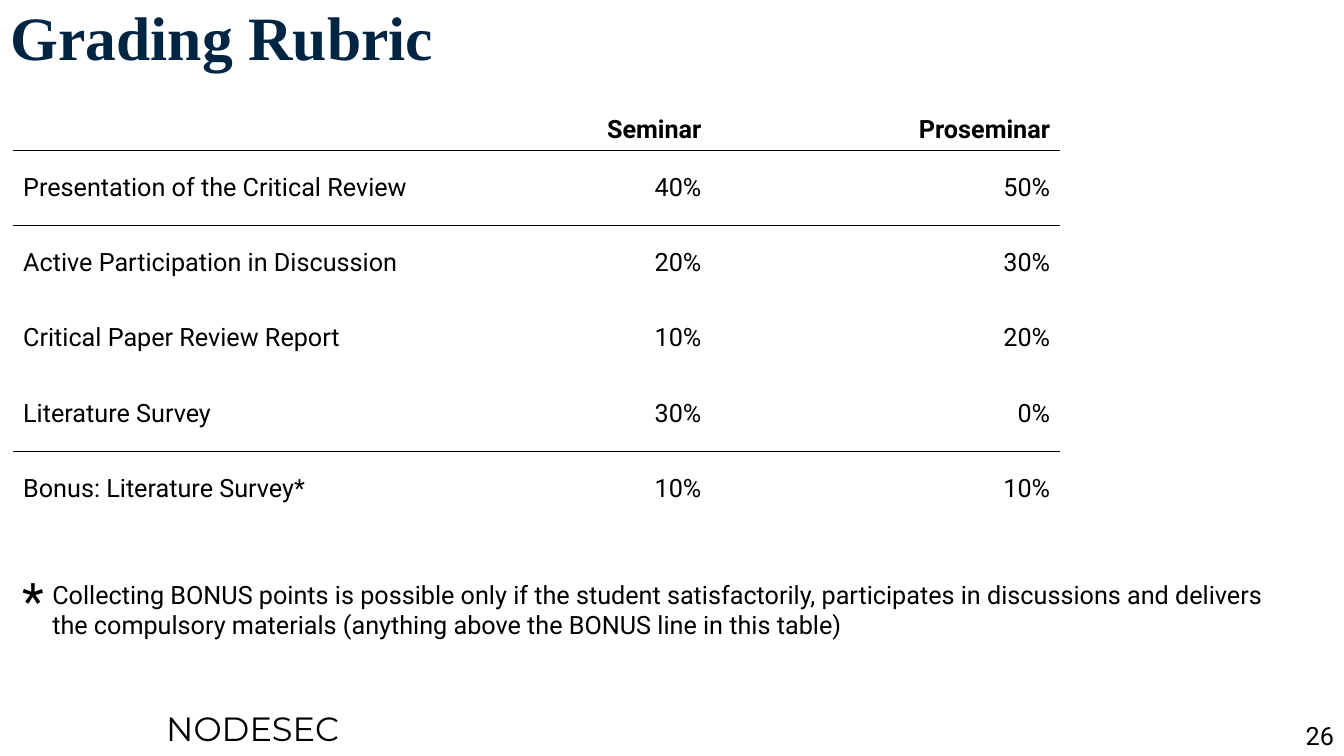
from collections import namedtuple

from lxml.etree import SubElement
from pptx import Presentation
from pptx.dml.color import RGBColor
from pptx.enum.text import MSO_ANCHOR as Anchor, PP_ALIGN as Align
from pptx.oxml.ns import qn
from pptx.util import Cm, Pt

BLACK = RGBColor(0x00, 0x00, 0x00)
NAVY = RGBColor(0x00, 0x25, 0x43)
BODY_FONT = "Roboto"

Box = namedtuple("Box", "left top width height")

RUBRIC = [
    ("", "Seminar", "Proseminar"),
    ("Presentation of the Critical Review", "40%", "50%"),
    ("Active Participation in Discussion", "20%", "30%"),
    ("Critical Paper Review Report", "10%", "20%"),
    ("Literature Survey", "30%", "0%"),
    ("Bonus: Literature Survey*", "10%", "10%"),
]
RULED_ROWS = {0, 1, 4}
COLUMN_SHARES = (0.415, 0.252, 0.333)
HEADER_HEIGHT = Cm(0.93)
FOOTNOTE = (
    "Collecting BONUS points is possible only if the student satisfactorily, "
    "participates in discussions and delivers\n"
    "the compulsory materials (anything above the BONUS line in this table)"
)


def style_paragraph(paragraph, size=18, name=BODY_FONT, color=BLACK, bold=False, align=Align.LEFT):
    paragraph.alignment = align
    font = paragraph.font
    font.size, font.name, font.bold = Pt(size), name, bold
    font.color.rgb = color


def add_text(slide, box, text, wrap=True, anchor=Anchor.TOP, **style):
    frame = slide.shapes.add_textbox(*box).text_frame
    frame.word_wrap = wrap
    frame.vertical_anchor = anchor
    paragraph = frame.paragraphs[0]
    paragraph.text = text
    style_paragraph(paragraph, **style)
    return paragraph


def add_title(slide, box):
    title = add_text(slide, box, "Grading Rubric", anchor=Anchor.MIDDLE,
                     size=44, name="Times New Roman", color=NAVY, bold=True)
    title.line_spacing = 0.9


def set_borders(cell, ruled_sides):
    properties = cell._tc.get_or_add_tcPr()
    for side in ("lnL", "lnR", "lnT", "lnB"):
        line = SubElement(properties, qn(f"a:{side}"), w=str(Pt(1)))
        if side in ruled_sides:
            fill = SubElement(line, qn("a:solidFill"))
            SubElement(fill, qn("a:srgbClr"), val=str(BLACK))
        else:
            SubElement(line, qn("a:noFill"))


def add_rubric(slide, box):
    table = slide.shapes.add_table(len(RUBRIC), len(COLUMN_SHARES), *box).table
    table.first_row = table.horz_banding = False
    for column, share in zip(table.columns, COLUMN_SHARES):
        column.width = int(box.width * share)
    for index, row in enumerate(table.rows):
        row.height = (box.height - HEADER_HEIGHT) // (len(RUBRIC) - 1) if index else HEADER_HEIGHT
        ruled_sides = set()
        if index in RULED_ROWS:
            ruled_sides.add("lnB")
        if index - 1 in RULED_ROWS:
            ruled_sides.add("lnT")
        for position, (cell, text) in enumerate(zip(row.cells, RUBRIC[index])):
            set_borders(cell, ruled_sides)
            cell.fill.background()
            cell.vertical_anchor = Anchor.MIDDLE
            paragraph = cell.text_frame.paragraphs[0]
            paragraph.text = text
            style_paragraph(paragraph, bold=index == 0,
                            align=Align.RIGHT if position else Align.LEFT)


def add_footnote(slide, box):
    indent, drop = Cm(0.74), Cm(0.25)
    add_text(slide, Box(box.left + indent, box.top + drop, box.width - indent, box.height - drop),
             FOOTNOTE)
    add_text(slide, Box(box.left, box.top, Cm(1.09), box.height), "*", wrap=False, size=36)


def add_footer(slide, box):
    number_width = Cm(1.9)
    add_text(slide, Box(box.left + Cm(3.94), box.top, Cm(6), box.height), "NODESEC",
             size=24, name="Montserrat")
    add_text(slide, Box(box.left + box.width - number_width, box.top + Cm(0.3),
                        number_width, Cm(1.02)), "26", align=Align.RIGHT)


def main():
    presentation = Presentation()
    presentation.slide_width, presentation.slide_height = Cm(33.87), Cm(19.05)
    slide = presentation.slides.add_slide(presentation.slide_layouts[6])
    add_footer(slide, Box(Cm(0), Cm(17.72), presentation.slide_width, Cm(1.27)))
    add_title(slide, Box(Cm(0.02), Cm(0), presentation.slide_width - Cm(0.02), Cm(2.03)))
    add_rubric(slide, Box(Cm(0.33), Cm(2.77), Cm(26.39), Cm(10.41)))
    add_footnote(slide, Box(Cm(0.33), Cm(14.22), Cm(32.44), Cm(2.05)))
    presentation.save("out.pptx")


if __name__ == "__main__":
    main()
